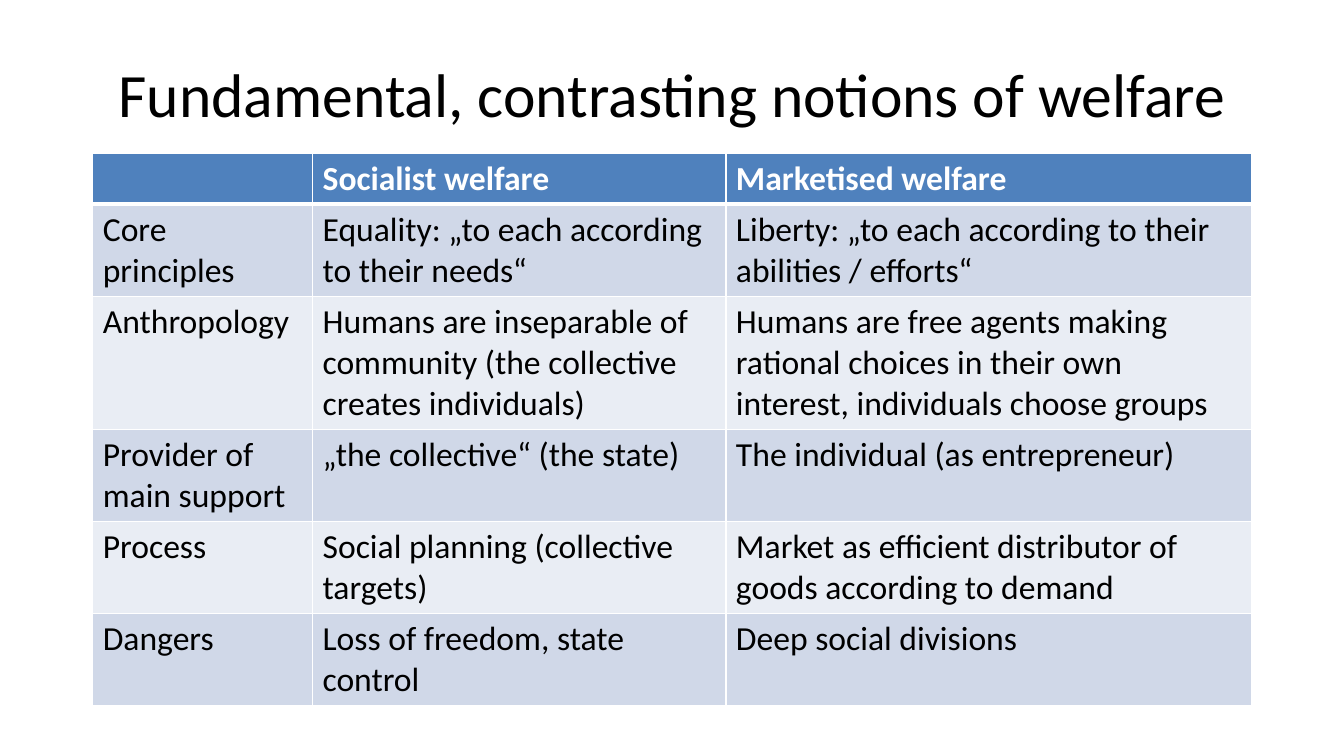
import pptx
import pptx.util
import pptx.dml.color
import pptx.enum.text
import pptx.oxml
import pptx.oxml.ns
from lxml import etree

Inches = pptx.util.Inches
Pt = pptx.util.Pt

HEAD = ["", "Socialist welfare", "Marketised welfare"]
BODY = [
    ["Core principles",
     "Equality: „to each according to their needs“",
     "Liberty: „to each according to their abilities / efforts“"],
    ["Anthropology",
     "Humans are inseparable of community (the collective creates individuals)",
     "Humans are free agents making rational choices in their own interest, "
     "individuals choose groups"],
    ["Provider of main support",
     "„the collective“ (the state)",
     "The individual (as entrepreneur)"],
    ["Process",
     "Social planning (collective targets)",
     "Market as efficient distributor of goods according to demand"],
    ["Dangers",
     "Loss of freedom, state control",
     "Deep social divisions"],
]


def color(code):
    return pptx.dml.color.RGBColor.from_string(code)


class Deck:
    font = "Calibri"
    ink = "000000"
    paper = "FFFFFF"
    accent = "4F81BD"
    bands = ("D0D8E8", "E9EDF4")

    def __init__(self):
        self.prs = pptx.Presentation()
        self.prs.slide_width = Inches(13.33)
        self.prs.slide_height = Inches(7.5)
        self.slide = self.prs.slides.add_slide(self.prs.slide_layouts[5])

    def add_text(self, para, text, size, ink, bold=False):
        run = para.add_run()
        run.text = text
        run.font.name = self.font
        run.font.size = Pt(size)
        run.font.bold = bold
        run.font.color.rgb = color(ink)

    def title(self, text, left, top, width, height):
        box = self.slide.shapes.title
        box.left, box.top = Inches(left), Inches(top)
        box.width, box.height = Inches(width), Inches(height)
        frame = box.text_frame
        frame.word_wrap = True
        frame.vertical_anchor = pptx.enum.text.MSO_ANCHOR.MIDDLE
        para = frame.paragraphs[0]
        para.alignment = pptx.enum.text.PP_ALIGN.CENTER
        self.add_text(para, text, 44, self.ink)

    def border(self, cell, side, width):
        """Draw one side (L, R, T or B) of a cell, width in points."""
        props = cell._tc.get_or_add_tcPr()
        name = pptx.oxml.ns.qn
        line = etree.SubElement(props, name("a:ln" + side), w=str(Pt(width)))
        fill = etree.SubElement(line, name("a:solidFill"))
        etree.SubElement(fill, name("a:srgbClr"), val=self.paper)

    def cell(self, cell, text, row):
        head = row == 0
        for side in "LRTB":
            thick = (head and side == "B") or (row == 1 and side == "T")
            self.border(cell, side, 3 if thick else 1)
        cell.fill.solid()
        fill = self.accent if head else self.bands[(row - 1) % 2]
        cell.fill.fore_color.rgb = color(fill)
        if text:
            ink = self.paper if head else self.ink
            self.add_text(cell.text_frame.paragraphs[0], text, 24, ink, head)

    def table(self, rows, widths, left, top, height, pitch):
        """Place a table whose rows grow from the least height, pitch."""
        frame = self.slide.shapes.add_table(
            len(rows), len(widths), Inches(left), Inches(top),
            Inches(sum(widths)), Inches(height))
        grid = frame.table
        for col, width in zip(grid.columns, widths):
            col.width = Inches(width)
        for i, texts in enumerate(rows):
            grid.rows[i].height = Inches(pitch)
            for j, text in enumerate(texts):
                self.cell(grid.cell(i, j), text, i)
        frame.height = Inches(height)

    def save(self):
        self.prs.save("out.pptx")


def main():
    deck = Deck()
    deck.title("Fundamental, contrasting notions of welfare", 0.67, 0.3, 12, 1.25)
    deck.table([HEAD] + BODY, [2.18, 4.1, 5.21], 0.92, 1.52, 5.4, 0.41)
    deck.save()


if __name__ == "__main__":
    main()
